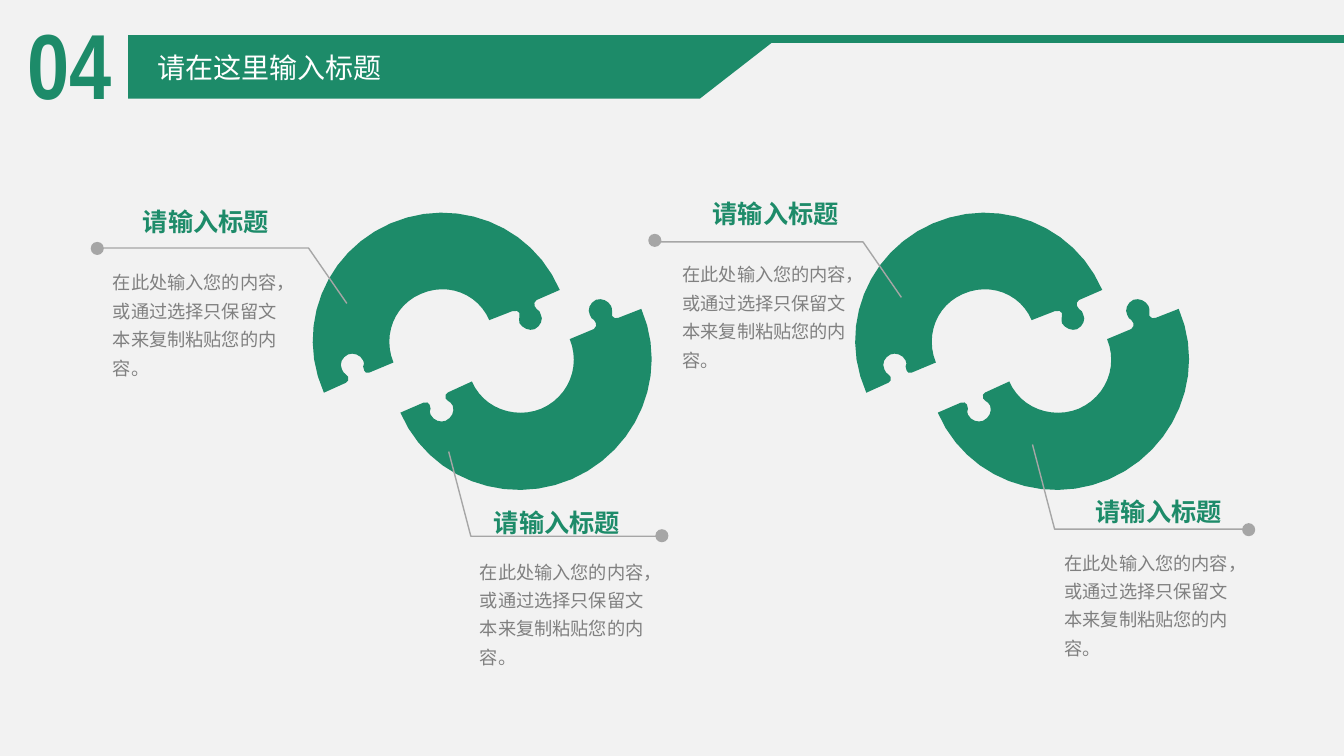
from math import ceil, cos, dist, radians, sin

from lxml import etree
from pptx import Presentation
from pptx.dml.color import RGBColor
from pptx.enum.shapes import MSO_CONNECTOR, MSO_SHAPE
from pptx.enum.text import MSO_AUTO_SIZE
from pptx.oxml.ns import qn
from pptx.util import Pt

STRAIGHT = MSO_CONNECTOR.STRAIGHT
RECTANGLE = MSO_SHAPE.RECTANGLE
OVAL = MSO_SHAPE.OVAL
FIT_SHAPE = MSO_AUTO_SIZE.SHAPE_TO_FIT_TEXT

EMU_PER_PX = 9144
WIDTH, HEIGHT = 1333, 750
STEP_LENGTH = 5
MOST_STEPS = 12
TURN = 246.6

GREEN, GRAY, TEXT_GRAY, PALE, WHITE = "1D8B69", "A6A6A6", "808080", "F2F2F2", "FFFFFF"
SANS, NARROW = "Noto Sans CJK SC", "Arial Narrow"

HEADING = {"font": {"name": SANS, "size": Pt(18), "bold": True}, "color": GREEN, "spacing": 1.5}
BODY = {"font": {"name": SANS, "size": Pt(13)}, "color": TEXT_GRAY, "spacing": 1.3, "insets": (8, 4)}
NUMBER = {"font": {"name": NARROW, "size": Pt(66), "bold": True}, "color": GREEN}
TITLE = {"font": {"name": SANS, "size": Pt(20)}, "color": WHITE}

HEADING_TEXT = "请输入标题"
BODY_TEXT = "在此处输入您的内容，或通过选择只保留文本来复制粘贴您的内容。"

UPPER_PIECE = [
    (321, 390), (343, 380), (345, 379, 346, 377, 345, 374), (343, 372),
    (341, 371, 340, 369, 339, 367), (336, 361, 339, 355, 345, 352),
    (350, 350, 357, 352, 360, 358), (361, 360, 361, 362, 360, 364),
    (361, 368), (361, 370, 364, 371, 366, 370), (390, 360),
    (379, 333, 391, 303, 417, 292), (444, 280, 474, 292, 485, 318), (508, 309),
    (512, 308, 514, 309, 515, 311), (515, 314),
    (514, 316, 515, 318, 515, 321), (518, 326, 525, 329, 530, 327),
    (536, 324, 539, 317, 536, 312), (536, 310, 534, 308, 532, 307),
    (530, 304), (529, 302, 530, 299, 532, 298), (555, 288),
    (527, 223, 452, 194, 387, 222), (322, 250, 292, 325, 321, 390),
]
LOWER_PIECE = [
    (426, 402), (427, 406), (426, 408, 426, 410, 427, 412),
    (430, 418, 437, 420, 442, 418), (448, 415, 451, 409, 449, 403),
    (448, 401, 446, 399, 444, 398), (442, 396),
    (441, 393, 442, 391, 444, 390), (468, 379),
    (479, 405, 510, 417, 537, 406), (564, 394, 576, 364, 565, 337), (589, 327),
    (591, 325, 592, 323, 591, 321), (589, 318),
    (587, 317, 586, 316, 585, 313), (582, 308, 585, 301, 591, 298),
    (597, 296, 603, 299, 606, 304), (607, 306, 607, 308, 607, 310),
    (607, 314), (608, 316, 611, 317, 613, 316), (636, 307),
    (664, 372, 633, 447, 567, 476), (501, 504, 425, 475, 397, 410), (420, 400),
    (423, 399, 425, 400, 426, 402),
]
PIECES = [
    (UPPER_PIECE, (418, 292), (0, 538)),
    (LOWER_PIECE, (537, 405), (0, 533)),
]

UPPER_LEADER = [(0, 0), (-38, -55), (-247, -55)]
LOWER_LEADER = [(0, 0), (22, 84), (215, 84)]
CALLOUTS = [
    (UPPER_LEADER, (344, 301), (90, 240), (132, 185), (104, 259)),
    (LOWER_LEADER, (445, 448), (650, 525), (480, 483), (468, 546)),
    (UPPER_LEADER, (894, 295), (643, 232), (697, 177), (669, 251)),
    (LOWER_LEADER, (1024, 441), (1232, 519), (1077, 472), (1048, 537)),
]


def px(value):
    return round(value * EMU_PER_PX)


def color(value):
    return RGBColor.from_string(value)


def flatten(outline):
    points = [outline[0]]
    for segment in outline[1:]:
        if len(segment) == 2:
            points.append(segment)
            continue
        start, first, second, end = points[-1], segment[:2], segment[2:4], segment[4:]
        steps = min(MOST_STEPS, ceil(dist(start, end) / STEP_LENGTH))
        for step in range(1, steps + 1):
            t = step / steps
            u = 1 - t
            points.append(tuple(
                u**3 * a + 3 * u * u * t * b + 3 * u * t * t * c + t**3 * d
                for a, b, c, d in zip(start, first, second, end)
            ))
    return points


def rotate(points, center, degrees):
    cosine, sine = cos(radians(degrees)), sin(radians(degrees))
    cx, cy = center
    return [
        (cx + (x - cx) * cosine - (y - cy) * sine, cy + (x - cx) * sine + (y - cy) * cosine)
        for x, y in points
    ]


def shift(points, dx, dy):
    return [(x + dx, y + dy) for x, y in points]


class Page:
    def __init__(self, deck):
        self.shapes = deck.slides.add_slide(deck.slide_layouts[6]).shapes

    def paint(self, shape, fill):
        shape.shadow.inherit = False
        shape.fill.solid()
        shape.fill.fore_color.rgb = color(fill)
        shape.line.fill.background()

    def stroke(self, line, stroke_color, width):
        line.color.rgb = color(stroke_color)
        line.width = Pt(width)

    def preset(self, kind, left, top, width, height, fill):
        shape = self.shapes.add_shape(kind, px(left), px(top), px(width), px(height))
        self.paint(shape, fill)

    def outline(self, points, close):
        start, *rest = [(px(x), px(y)) for x, y in points]
        builder = self.shapes.build_freeform(*start, scale=1.0)
        builder.add_line_segments(rest, close=close)
        return builder.convert_to_shape()

    def solid(self, points, fill, rotation=0):
        shape = self.outline(points, True)
        self.paint(shape, fill)
        shape.rotation = rotation

    def leader(self, points):
        shape = self.outline(points, False)
        shape.shadow.inherit = False
        shape.fill.background()
        self.stroke(shape.line, GRAY, 1)

    def rule(self, x1, y1, x2, y2, stroke_color, width):
        line = self.shapes.add_connector(STRAIGHT, px(x1), px(y1), px(x2), px(y2))
        self.stroke(line.line, stroke_color, width)
        etree.SubElement(line._element.spPr, qn("a:effectLst"))

    def text(self, words, left, top, width, height, style):
        box = self.shapes.add_textbox(px(left), px(top), px(width), px(height))
        side, edge = style.get("insets", (10, 5))
        frame_format = {
            "word_wrap": True, "auto_size": FIT_SHAPE,
            "margin_left": px(side), "margin_right": px(side),
            "margin_top": px(edge), "margin_bottom": px(edge),
        }
        for name, value in frame_format.items():
            setattr(box.text_frame, name, value)
        para = box.text_frame.paragraphs[0]
        para.line_spacing = style.get("spacing")
        span = para.add_run()
        span.text = words
        for name, value in style["font"].items():
            setattr(span.font, name, value)
        span.font.color.rgb = color(style["color"])
        east_asian = etree.SubElement(span._r.get_or_add_rPr(), qn("a:ea"))
        east_asian.set("typeface", style["font"]["name"])


def main():
    deck = Presentation()
    deck.slide_width, deck.slide_height = px(WIDTH), px(HEIGHT)
    page = Page(deck)
    page.preset(RECTANGLE, 0, 0, WIDTH, HEIGHT, PALE)
    page.rule(678, 39, WIDTH, 39, GREEN, 6)
    page.solid([(127, 35), (775, 35), (694, 98), (127, 98)], GREEN)
    for piece, center, offsets in PIECES:
        upright = rotate(flatten(piece), center, -TURN)
        for offset in offsets:
            page.solid(shift(upright, offset, 0), GREEN, TURN)
    for leader, tip, dot, heading, body in CALLOUTS:
        page.leader(shift(leader, *tip))
        page.preset(OVAL, *dot, 13, 13, GRAY)
        page.text(BODY_TEXT, *body, 188, 119, BODY)
        page.text(HEADING_TEXT, *heading, 170, 50, HEADING)
    page.text("04", 17, 2, 159, 121, NUMBER)
    page.text("请在这里输入标题", 146, 45, 334, 44, TITLE)
    deck.save("out.pptx")


if __name__ == "__main__":
    main()
